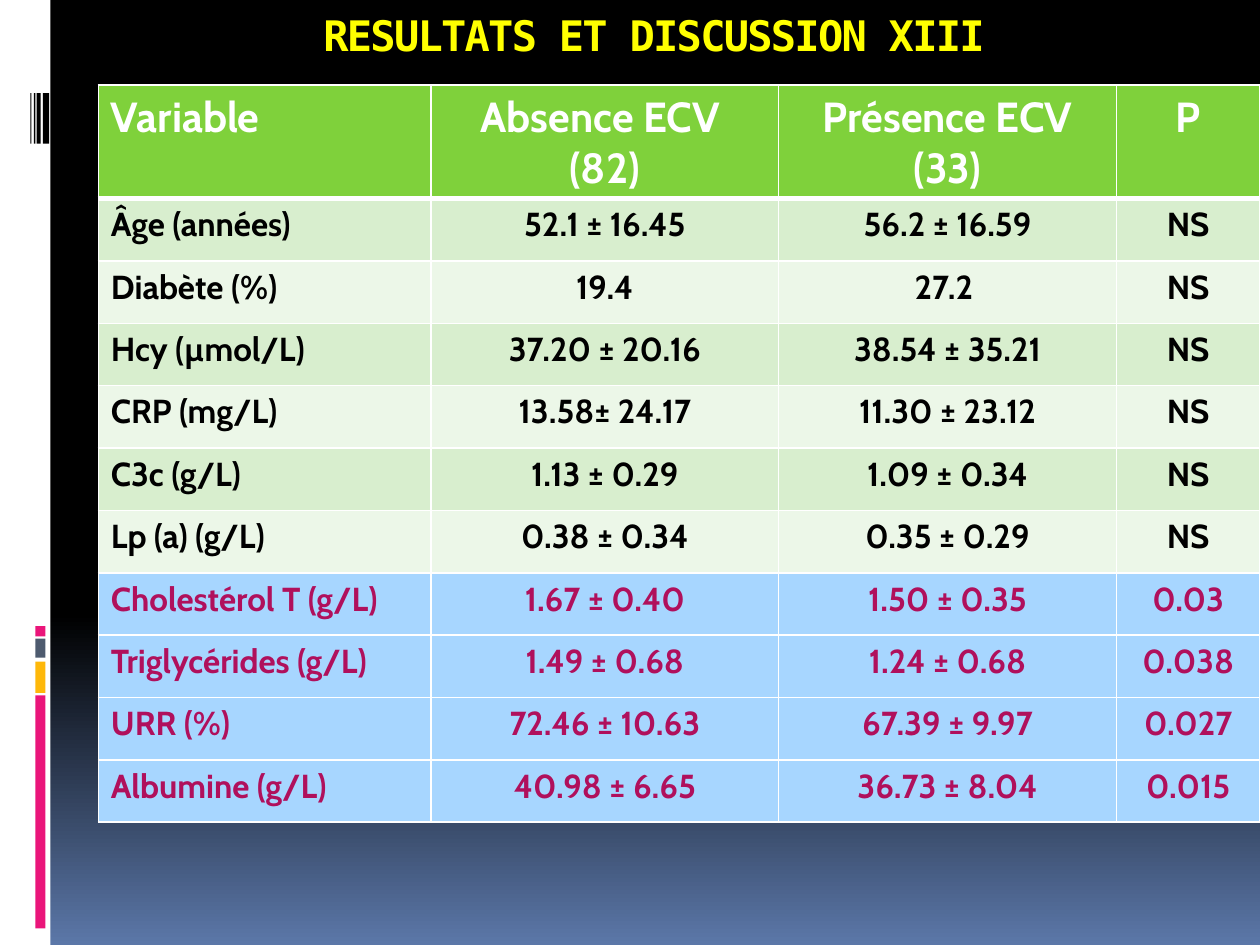
from lxml import etree
from pptx import Presentation
from pptx import util as u
from pptx.dml.color import RGBColor
from pptx.enum import shapes, text
from pptx.oxml.ns import qn

Pt = u.Pt
WHITE = RGBColor(0xFF, 0xFF, 0xFF)
BLACK = RGBColor(0, 0, 0)
YELLOW = RGBColor(0xFF, 0xFF, 0)
PINK = RGBColor(0xEA, 0x15, 0x7A)
AMBER = RGBColor(0xFE, 0xB8, 0x0A)
SLATE = RGBColor(0x4E, 0x5B, 0x6F)
NIGHT_BLUE = RGBColor(0x5B, 0x77, 0xA8)
GREEN = RGBColor(0x7F, 0xD1, 0x3B)
BANDS = (RGBColor(0xD8, 0xEE, 0xCE), RGBColor(0xEC, 0xF7, 0xE8))
SKY = RGBColor(0xA7, 0xD6, 0xFF)
CRIMSON = RGBColor(0xB0, 0x10, 0x5C)

HEADER = ("Variable", "Absence ECV \n(82)", "Présence ECV (33)", "P")
ROWS = (
    ("Âge (années)", "52.1 ± 16.45", "56.2 ± 16.59", "NS"),
    ("Diabète (%)", "19.4", "27.2 ", "NS"),
    ("Hcy (µmol/L)", "37.20 ± 20.16", "38.54 ± 35.21", "NS"),
    ("CRP (mg/L)", "13.58± 24.17", "11.30 ± 23.12", "NS"),
    ("C3c (g/L)", "1.13 ± 0.29", "1.09 ± 0.34", "NS"),
    ("Lp (a) (g/L)", "0.38 ± 0.34", "0.35 ± 0.29", "NS"),
    ("Cholestérol T (g/L)", "1.67 ± 0.40", "1.50 ± 0.35", "0.03"),
    ("Triglycérides (g/L)", "1.49 ± 0.68", "1.24 ± 0.68", "0.038"),
    ("URR (%)", "72.46 ± 10.63", "67.39 ± 9.97", "0.027"),
    ("Albumine (g/L)", "40.98 ± 6.65", "36.73 ± 8.04", "0.015"),
)
COLUMN_WIDTHS = (190.1, 198.7, 193, 82)
HEADER_HEIGHT, ROW_HEIGHT = 64.8, 35.64

# (top, height, colour) of the stacked side bars
SIDE_BARS = ((397.4, 133.2, PINK), (378, 18, AMBER),
             (365, 10.8, SLATE), (357.8, 5.8, PINK))
# (left, width) of the barcode stripes
STRIPES = ((24.5, 3.6), (21, 2.2), (19.4, 0.9), (17.4, 0.5))


def set_background(s):
    fill = s.background.fill
    fill.gradient()
    fill.gradient_angle = 270
    for stop, position, color in zip(fill.gradient_stops, (0.65, 1), (BLACK, NIGHT_BLUE)):
        stop.position = position
        stop.color.rgb = color


def add_bar(s, left, top, width, height, color):
    sp = s.shapes.add_shape(shapes.MSO_SHAPE.RECTANGLE,
                            Pt(left), Pt(top), Pt(width), Pt(height))
    sp.shadow.inherit = False
    sp.fill.solid()
    sp.fill.fore_color.rgb = color
    sp.line.fill.background()


def write(tf, content, font, size, color, centred):
    tf.text = content
    for p in tf.paragraphs:
        p.alignment = text.PP_ALIGN.CENTER if centred else text.PP_ALIGN.LEFT
        for r in p.runs:
            r.font.name = font
            r.font.size = Pt(size)
            r.font.bold = True
            r.font.color.rgb = color


def add_title(s):
    sp = s.shapes.add_textbox(Pt(67.7), 0, Pt(612), Pt(44.6))
    tf = sp.text_frame
    tf.word_wrap = True
    tf.margin_top = Pt(5.6)
    write(tf, "RESULTATS ET DISCUSSION XIII", "DejaVu Sans Mono", 24, YELLOW, True)
    tf.paragraphs[0].runs[0].font._element.set("spc", "-100")


def set_borders(cell, widths):
    tc_pr = cell._tc.get_or_add_tcPr()
    for i, (side, width) in enumerate(zip("LRTB", widths)):
        ln = etree.Element(qn(f"a:ln{side}"), w=str(Pt(width)))
        fill = etree.SubElement(ln, qn("a:solidFill"))
        etree.SubElement(fill, qn("a:srgbClr"), val=str(WHITE))
        tc_pr.insert(i, ln)


def row_style(i):
    """Fill, text colour and text size of table row i."""
    if i == 0:
        return GREEN, WHITE, 24
    if ROWS[i - 1][-1] == "NS":
        return BANDS[(i - 1) % 2], BLACK, 19
    return SKY, CRIMSON, 19


def add_results_table(s):
    data = (HEADER,) + ROWS
    height = HEADER_HEIGHT + ROW_HEIGHT * len(ROWS)
    table = s.shapes.add_table(len(data), len(HEADER), Pt(56.2), Pt(48.7),
                               Pt(sum(COLUMN_WIDTHS)), Pt(height)).table
    for column, width in zip(table.columns, COLUMN_WIDTHS):
        column.width = Pt(width)
    for i, values in enumerate(data):
        table.rows[i].height = Pt(ROW_HEIGHT if i else HEADER_HEIGHT)
        fill, color, size = row_style(i)
        for j, value in enumerate(values):
            cell = table.cell(i, j)
            write(cell.text_frame, value, "Cabin", size, color, j > 0)
            cell.fill.solid()
            cell.fill.fore_color.rgb = fill
            # A thick rule separates the header from the body
            set_borders(cell, (1, 1, 3 if i == 1 else 1, 1 if i else 3))


def main():
    prs = Presentation()
    prs.slide_width, prs.slide_height = Pt(720), Pt(540)
    s = prs.slides.add_slide(prs.slide_layouts[6])
    set_background(s)

    # Left margin decoration
    add_bar(s, 0, 0, 28.8, 540, WHITE)
    for top, height, color in SIDE_BARS:
        add_bar(s, 20.2, top, 5.8, height, color)
    for left, width in STRIPES:
        add_bar(s, left, 53.3, width, 28.8, BLACK)

    # Content
    add_title(s)
    add_results_table(s)
    prs.save("out.pptx")


if __name__ == "__main__":
    main()
